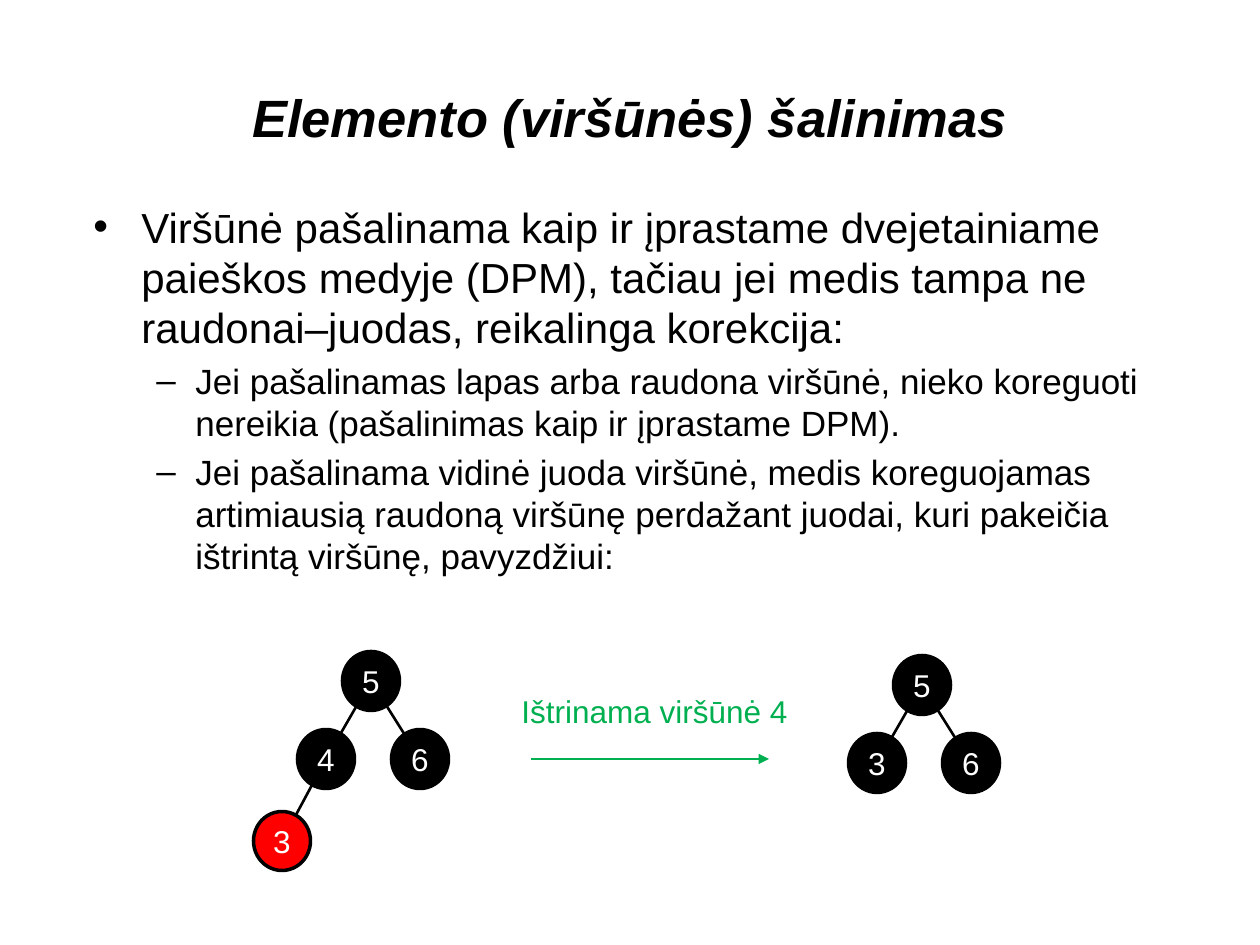
from lxml import etree
from pptx import Presentation
from pptx.dml.color import RGBColor
from pptx.enum.shapes import MSO_CONNECTOR, MSO_SHAPE
from pptx.enum.text import MSO_ANCHOR, PP_ALIGN
from pptx.oxml.ns import qn
from pptx.util import Emu, Pt

CENTER, LEFT = PP_ALIGN.CENTER, PP_ALIGN.LEFT
MIDDLE, TOP = MSO_ANCHOR.MIDDLE, MSO_ANCHOR.TOP
ELLIPSE, STRAIGHT = MSO_SHAPE.OVAL, MSO_CONNECTOR.STRAIGHT

SCALE = 914400 / 126  # EMU in one px
FONT = "Arial"
COLORS = {"black": "000000", "white": "FFFFFF", "red": "FF0000", "green": "00B050"}
NODE_WIDTH, NODE_HEIGHT = 57, 59

# Bullet levels: character, left margin and hanging indent in px, size, space before
LEVELS = [("•", 48, 48, 24, 5), ("–", 102, 39, 20, 4)]
BODY = [
    (0, "Viršūnė pašalinama kaip ir įprastame dvejetainiame paieškos medyje (DPM), "
        "tačiau jei medis tampa ne raudonai–juodas, reikalinga korekcija:"),
    (1, "Jei pašalinamas lapas arba raudona viršūnė, nieko koreguoti nereikia "
        "(pašalinimas kaip ir įprastame DPM)."),
    (1, "Jei pašalinama vidinė juoda viršūnė, medis koreguojamas artimiausią raudoną "
        "viršūnę perdažant juodai, kuri pakeičia ištrintą viršūnę, pavyzdžiui:"),
]

# Tree nodes: label, offset from the root, index of the parent, fill
ROOT = ("5", 0, 0, None, "black")
RIGHT_CHILD = ("6", 49, 78, 0, "black")
TREE_BEFORE = [ROOT, ("4", -45, 78, 0, "black"), RIGHT_CHILD, ("3", -89, 160, 1, "red")]
TREE_AFTER = [ROOT, ("3", -45, 78, 0, "black"), RIGHT_CHILD]


def px(length):
    return Emu(round(length * SCALE))


def color(name):
    return RGBColor.from_string(COLORS[name])


def write_text(paragraph, text, size=18, fill="black", bold=False, italic=False, align=LEFT):
    paragraph.text = text
    paragraph.alignment = align
    font = paragraph.font
    font.name, font.size, font.bold, font.italic = FONT, Pt(size), bold, italic
    font.color.rgb = color(fill)


def add_bullet(paragraph, character, margin, hanging):
    properties = paragraph._p.get_or_add_pPr()
    properties.set("marL", str(px(margin)))
    properties.set("indent", str(px(-hanging)))
    etree.SubElement(properties, qn("a:buFont"), typeface=FONT)
    etree.SubElement(properties, qn("a:buChar"), char=character)


def add_title(slide, text):
    title = slide.shapes.title
    title.left, title.top, title.width, title.height = px(63), px(38), px(1134), px(158)
    title.text_frame.vertical_anchor = MIDDLE
    write_text(title.text_frame.paragraphs[0], text, size=30, bold=True, italic=True, align=CENTER)


def add_text_box(slide, left, top, width, height, wrap=True):
    frame = slide.shapes.add_textbox(px(left), px(top), px(width), px(height)).text_frame
    frame.word_wrap = wrap
    frame.vertical_anchor = TOP
    return frame


def add_body(slide):
    frame = add_text_box(slide, 81, 195, 1120, 277)
    for index, (level, text) in enumerate(BODY):
        character, margin, hanging, size, space = LEVELS[level]
        paragraph = frame.add_paragraph() if index else frame.paragraphs[0]
        paragraph.level = level
        add_bullet(paragraph, character, margin, hanging)
        paragraph.line_spacing = 1.0
        paragraph.space_before = Pt(space if index else 0)
        write_text(paragraph, text, size=size)


def add_line(slide, start, end, fill="black", arrow=False):
    connector = slide.shapes.add_connector(STRAIGHT, *map(px, start + end))
    connector.line.color.rgb = color(fill)
    connector.line.width = Pt(1.5)
    if arrow:
        etree.SubElement(connector.line._get_or_add_ln(), qn("a:tailEnd"), type="triangle")
    etree.SubElement(connector._element.spPr, qn("a:effectLst"))


def add_node(slide, label, center, fill):
    x, y = center
    node = slide.shapes.add_shape(ELLIPSE, px(x - NODE_WIDTH / 2), px(y - NODE_HEIGHT / 2),
                                  px(NODE_WIDTH), px(NODE_HEIGHT))
    node.shadow.inherit = False
    node.fill.solid()
    node.fill.fore_color.rgb = color(fill)
    node.line.color.rgb = color("black")
    node.line.width = Pt(2)
    frame = node.text_frame
    frame.word_wrap = False
    frame.vertical_anchor = MIDDLE
    write_text(frame.paragraphs[0], label, fill="white", align=CENTER)


def add_tree(slide, x, y, nodes):
    centers = [(x + dx, y + dy) for _, dx, dy, _, _ in nodes]
    # Edges lie behind the nodes
    for center, (_, _, _, parent, _) in zip(centers, nodes):
        if parent is not None:
            add_line(slide, centers[parent], center)
    for center, (label, _, _, _, fill) in zip(centers, nodes):
        add_node(slide, label, center, fill)


def main():
    presentation = Presentation()
    presentation.slide_width, presentation.slide_height = px(1260), px(945)
    slide = presentation.slides.add_slide(presentation.slide_layouts[5])

    # Title and rules
    add_title(slide, "Elemento (viršūnės) šalinimas")
    add_body(slide)

    # Tree before, deletion step, tree after
    add_tree(slide, 371, 681, TREE_BEFORE)
    add_line(slide, (531, 759), (769, 759), fill="green", arrow=True)
    caption = add_text_box(slide, 509, 686, 294, 50, wrap=False)
    write_text(caption.paragraphs[0], "Ištrinama viršūnė 4", fill="green")
    add_tree(slide, 922, 685, TREE_AFTER)

    presentation.save("out.pptx")


if __name__ == "__main__":
    main()
